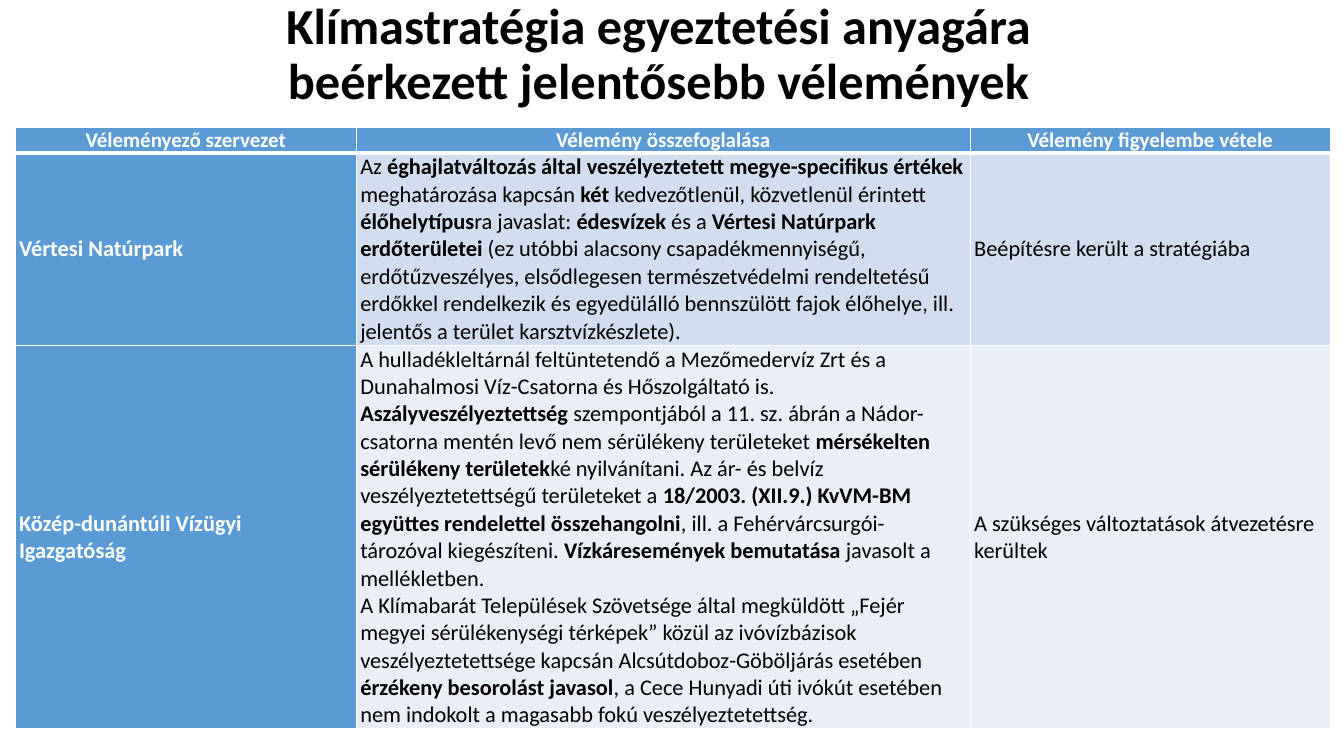
from dataclasses import dataclass

from lxml import etree
from pptx import Presentation
from pptx.dml.color import RGBColor
from pptx.enum.text import MSO_ANCHOR, PP_ALIGN
from pptx.oxml.ns import qn
from pptx.slide import Slide
from pptx.table import _Cell
from pptx.text.text import TextFrame
from pptx.util import Cm, Pt

CENTER = PP_ALIGN.CENTER
LEFT = PP_ALIGN.LEFT
MIDDLE = MSO_ANCHOR.MIDDLE


@dataclass(frozen=True)
class Theme:
    font: str = "Calibri"
    black: str = "000000"
    white: str = "FFFFFF"
    accent: str = "5B9BD5"
    bands: tuple[str, ...] = ("D2DEEF", "EAEFF7")
    title_size: float = 36
    header_size: float = 15
    body_size: float = 16
    thin_border: float = 1
    thick_border: float = 3


@dataclass(frozen=True)
class Opinion:
    organization: str
    summary: tuple[str, ...]
    response: str
    height: float


THEME = Theme()
TITLE = "Klímastratégia egyeztetési anyagára\nbeérkezett jelentősebb vélemények"
HEADERS = ("Véleményező szervezet", "Vélemény összefoglalása", "Vélemény figyelembe vétele")
COLUMN_WIDTHS = (8.6, 15.47, 9.07)
HEADER_HEIGHT = 0.65
OPINIONS = (
    Opinion(
        "Vértesi Natúrpark",
        (
            "Az **éghajlatváltozás által veszélyeztetett megye-specifikus értékek **"
            "meghatározása kapcsán **két **kedvezőtlenül, közvetlenül érintett "
            "**élőhelytípus**ra javaslat: **édesvízek **és a "
            "**Vértesi Natúrpark erdőterületei **(ez utóbbi alacsony "
            "csapadékmennyiségű, erdőtűzveszélyes, elsődlegesen természetvédelmi "
            "rendeltetésű erdőkkel rendelkezik és egyedülálló bennszülött fajok "
            "élőhelye, ill. jelentős a terület karsztvízkészlete).",
        ),
        "Beépítésre került a stratégiába",
        4.86,
    ),
    Opinion(
        "Közép-dunántúli Vízügyi Igazgatóság",
        (
            "A hulladékleltárnál feltüntetendő a Mezőmedervíz Zrt és a "
            "Dunahalmosi Víz-Csatorna és Hőszolgáltató is. "
            "**Aszályveszélyeztettség **szempontjából a 11. sz. ábrán a "
            "Nádor-csatorna mentén levő nem sérülékeny területeket "
            "**mérsékelten sérülékeny területek**ké nyilvánítani. Az ár- és belvíz "
            "veszélyeztetettségű területeket a **18/2003. (XII.9.) KvVM-BM együttes "
            "rendelettel összehangolni**, ill. a Fehérvárcsurgói-tározóval "
            "kiegészíteni. **Vízkáresemények bemutatása **javasolt a mellékletben.",
            "A Klímabarát Települések Szövetsége által megküldött „Fejér megyei "
            "sérülékenységi térképek” közül az ivóvízbázisok veszélyeztetettsége "
            "kapcsán Alcsútdoboz-Göböljárás esetében **érzékeny besorolást javasol**"
            ", a Cece Hunyadi úti ivókút esetében nem indokolt a magasabb fokú "
            "veszélyeztetettség.",
        ),
        "A szükséges változtatások átvezetésre kerültek",
        9.65,
    ),
)


def write_text(
    frame: TextFrame,
    paragraphs: tuple[str, ...],
    *,
    size: float,
    color: str = THEME.black,
    bold: bool = False,
    alignment: PP_ALIGN = LEFT,
    line_spacing: float = 1.0,
) -> None:
    frame.word_wrap = True
    for index, text in enumerate(paragraphs):
        paragraph = frame.paragraphs[0] if index == 0 else frame.add_paragraph()
        paragraph.alignment = alignment
        paragraph.line_spacing = line_spacing
        for part_index, part in enumerate(text.split("**")):
            for line_index, line in enumerate(part.split("\n")):
                if line_index:
                    paragraph.add_line_break()
                if not line:
                    continue
                run = paragraph.add_run()
                run.text = line
                run.font.name = THEME.font
                run.font.size = Pt(size)
                run.font.bold = bold or part_index % 2 == 1
                run.font.color.rgb = RGBColor.from_string(color)


def set_borders(cell: _Cell, top: float, bottom: float) -> None:
    properties = cell._tc.get_or_add_tcPr()
    thin = THEME.thin_border
    for tag, width in (("a:lnL", thin), ("a:lnR", thin), ("a:lnT", top), ("a:lnB", bottom)):
        border = etree.SubElement(properties, qn(tag), w=str(Pt(width)))
        fill = etree.SubElement(border, qn("a:solidFill"))
        etree.SubElement(fill, qn("a:srgbClr"), val=THEME.white)


def format_cell(cell: _Cell, fill: str, top: float, bottom: float) -> None:
    cell.vertical_anchor = MIDDLE
    cell.margin_left = cell.margin_right = Cm(0.1)
    cell.margin_top = cell.margin_bottom = Cm(0)
    set_borders(cell, top, bottom)
    cell.fill.solid()
    cell.fill.fore_color.rgb = RGBColor.from_string(fill)


def add_title(slide: Slide) -> None:
    shape = slide.shapes.add_textbox(Cm(2), Cm(0), Cm(29.2), Cm(2.8))
    frame = shape.text_frame
    frame.margin_top = frame.margin_bottom = Cm(0)
    frame.vertical_anchor = MIDDLE
    write_text(frame, (TITLE,), size=THEME.title_size, bold=True,
               alignment=CENTER, line_spacing=0.9)


def add_opinion_table(slide: Slide) -> None:
    heights = (HEADER_HEIGHT, *(opinion.height for opinion in OPINIONS))
    table = slide.shapes.add_table(
        len(heights), len(HEADERS), Cm(0.38), Cm(3.2),
        Cm(sum(COLUMN_WIDTHS)), Cm(sum(heights)),
    ).table
    for column, width in zip(table.columns, COLUMN_WIDTHS):
        column.width = Cm(width)
    for row, height in zip(table.rows, heights):
        row.height = Cm(height)

    for column_index, header in enumerate(HEADERS):
        cell = table.cell(0, column_index)
        format_cell(cell, THEME.accent, THEME.thin_border, THEME.thick_border)
        write_text(cell.text_frame, (header,), size=THEME.header_size,
                   color=THEME.white, bold=True, alignment=CENTER)

    for row_index, opinion in enumerate(OPINIONS, start=1):
        band = THEME.bands[(row_index - 1) % len(THEME.bands)]
        top = THEME.thick_border if row_index == 1 else THEME.thin_border
        contents = ((opinion.organization,), opinion.summary, (opinion.response,))
        for column_index, paragraphs in enumerate(contents):
            is_organization = column_index == 0
            cell = table.cell(row_index, column_index)
            format_cell(cell, THEME.accent if is_organization else band, top, THEME.thin_border)
            write_text(cell.text_frame, paragraphs, size=THEME.body_size,
                       color=THEME.white if is_organization else THEME.black,
                       bold=is_organization)


def main() -> None:
    presentation = Presentation()
    presentation.slide_width = Cm(33.87)
    presentation.slide_height = Cm(19.05)
    slide = presentation.slides.add_slide(presentation.slide_layouts[6])
    add_title(slide)
    add_opinion_table(slide)
    presentation.save("out.pptx")


if __name__ == "__main__":
    main()
